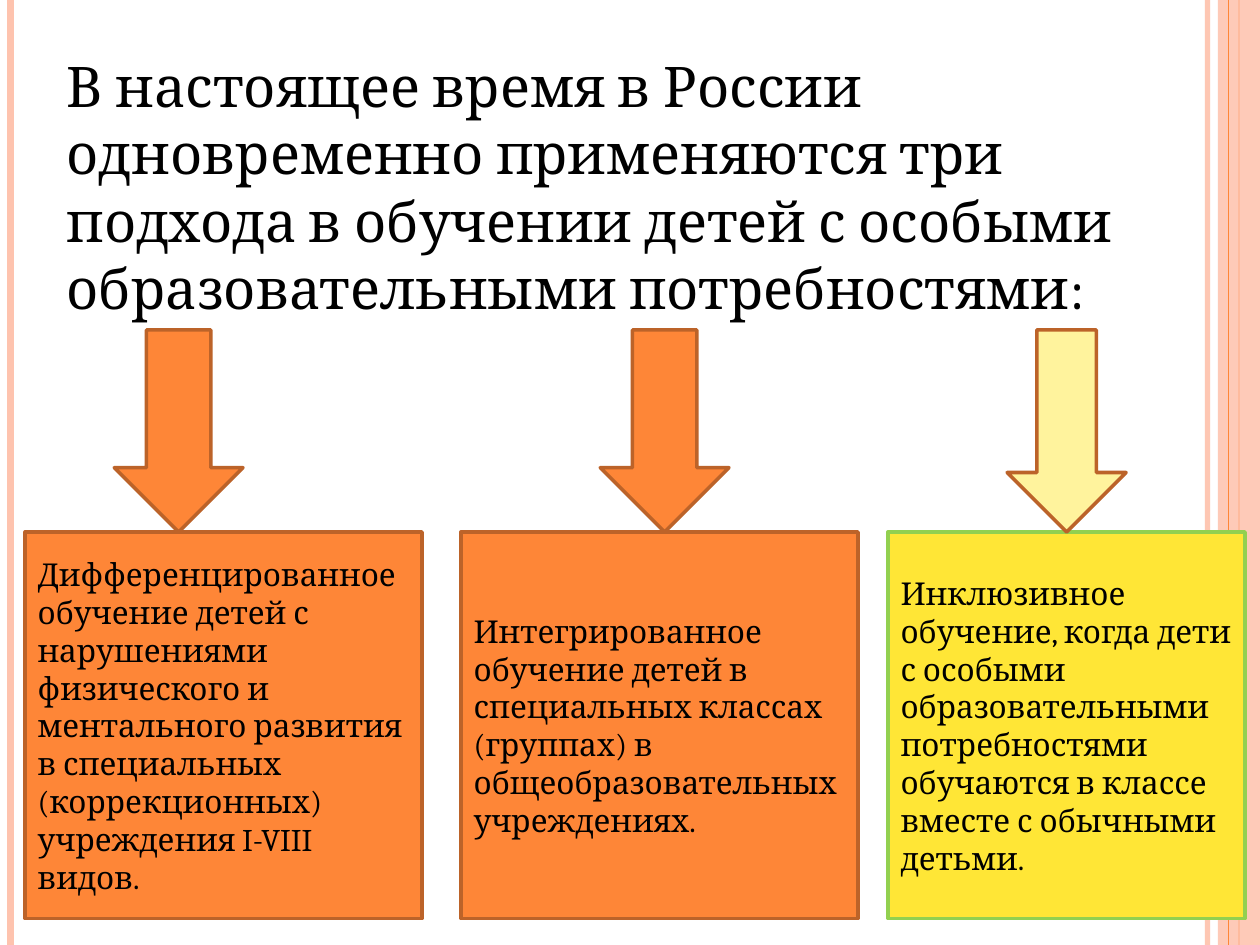
from lxml.etree import SubElement
from pptx import Presentation
from pptx.dml.color import RGBColor
from pptx.enum.shapes import MSO_CONNECTOR, MSO_SHAPE
from pptx.enum.text import MSO_ANCHOR, PP_ALIGN
from pptx.oxml.ns import qn
from pptx.util import Pt

WHITE = RGBColor(0xFF, 0xFF, 0xFF)
BLACK = RGBColor(0x00, 0x00, 0x00)
PEACH = RGBColor(0xFE, 0xC3, 0xAE)
ORANGE = RGBColor(0xFE, 0x86, 0x37)
BROWN = RGBColor(0xBC, 0x63, 0x29)
YELLOW = RGBColor(0xFF, 0xE6, 0x36)
PALE_YELLOW = RGBColor(0xFF, 0xF3, 0x9D)
GREEN = RGBColor(0x92, 0xD0, 0x50)

WIDTH, HEIGHT = 720, 540
BOX_TOP, BOX_HEIGHT = 304, 221
ARROW_TOP = 188.5


def set_opacity(properties, percent):
    """Make the first solid fill below the given XML element partly transparent."""
    color = next(properties.iter(qn("a:solidFill")))[0]
    SubElement(color, qn("a:alpha")).set("val", str(percent * 1000))


class SlideBuilder:
    font = "Cambria"
    outline_width = 2

    def __init__(self, slide):
        self.slide = slide
        self.shapes = slide.shapes

    def background(self, color):
        fill = self.slide.background.fill
        fill.solid()
        fill.fore_color.rgb = color

    def stripe(self, x, width, color, opacity=100):
        """Draw a vertical line over the full slide height."""
        line = self.shapes.add_connector(
            MSO_CONNECTOR.STRAIGHT, Pt(x), Pt(0), Pt(x), Pt(HEIGHT))
        line.line.width = Pt(width)
        line.line.color.rgb = color
        if opacity < 100:
            set_opacity(line._element.spPr, opacity)
        SubElement(line._element.spPr, qn("a:effectLst"))

    def shape(self, kind, left, top, width, height, fill, outline=None):
        sp = self.shapes.add_shape(kind, Pt(left), Pt(top), Pt(width), Pt(height))
        sp.shadow.inherit = False
        sp.fill.solid()
        sp.fill.fore_color.rgb = fill
        if outline is None:
            sp.line.fill.background()
        else:
            sp.line.color.rgb = outline
            sp.line.width = Pt(self.outline_width)
        return sp

    def label(self, sp, text, size):
        tf = sp.text_frame
        tf.word_wrap = True
        p = tf.paragraphs[0]
        p.text = text
        p.alignment = PP_ALIGN.LEFT
        p.font.name = self.font
        p.font.size = Pt(size)
        p.font.color.rgb = BLACK

    def heading(self, left, top, width, height, text):
        sp = self.shapes.add_textbox(Pt(left), Pt(top), Pt(width), Pt(height))
        self.label(sp, text, 32)

    def box(self, left, width, fill, outline, text):
        sp = self.shape(MSO_SHAPE.RECTANGLE, left, BOX_TOP, width, BOX_HEIGHT,
                        fill, outline)
        sp.text_frame.vertical_anchor = MSO_ANCHOR.MIDDLE
        self.label(sp, text, 18)

    def arrow(self, left, width, fill):
        """Draw a down arrow that ends at the top of the boxes."""
        self.shape(MSO_SHAPE.DOWN_ARROW, left, ARROW_TOP, width,
                   BOX_TOP - ARROW_TOP, fill, BROWN)


def main():
    prs = Presentation()
    prs.slide_width, prs.slide_height = Pt(WIDTH), Pt(HEIGHT)
    s = SlideBuilder(prs.slides.add_slide(prs.slide_layouts[6]))

    s.background(WHITE)
    s.stripe(690, 3, PEACH, 93)
    s.stripe(6, 4.5, PEACH)
    s.stripe(708, 1.5, ORANGE)
    band = s.shape(MSO_SHAPE.RECTANGLE, 696, 0, 24, HEIGHT, PEACH)
    set_opacity(band._element.spPr, 87)
    s.stripe(702, 0.75, ORANGE)

    s.heading(31, 26, 641, 163,
              "В настоящее время в России одновременно применяются три подхода "
              "в обучении детей с особыми образовательными потребностями:")

    approaches = [
        (14.4, 226.8, ORANGE, BROWN,
         "Дифференцированное обучение детей с нарушениями физического и "
         "ментального развития в специальных (коррекционных) учреждения "
         "I-VIII видов."),
        (263.5, 226.8, ORANGE, BROWN,
         "Интегрированное обучение детей в специальных классах (группах) в "
         "общеобразовательных учреждениях."),
        (507.5, 204, YELLOW, GREEN,
         "Инклюзивное обучение, когда дети с особыми образовательными "
         "потребностями обучаются в классе вместе с обычными детьми."),
    ]
    for approach in approaches:
        s.box(*approach)

    arrows = [(65.3, 73.6, ORANGE), (343, 73.6, ORANGE), (575.5, 68, PALE_YELLOW)]
    for arrow in arrows:
        s.arrow(*arrow)

    prs.save("out.pptx")


if __name__ == "__main__":
    main()
